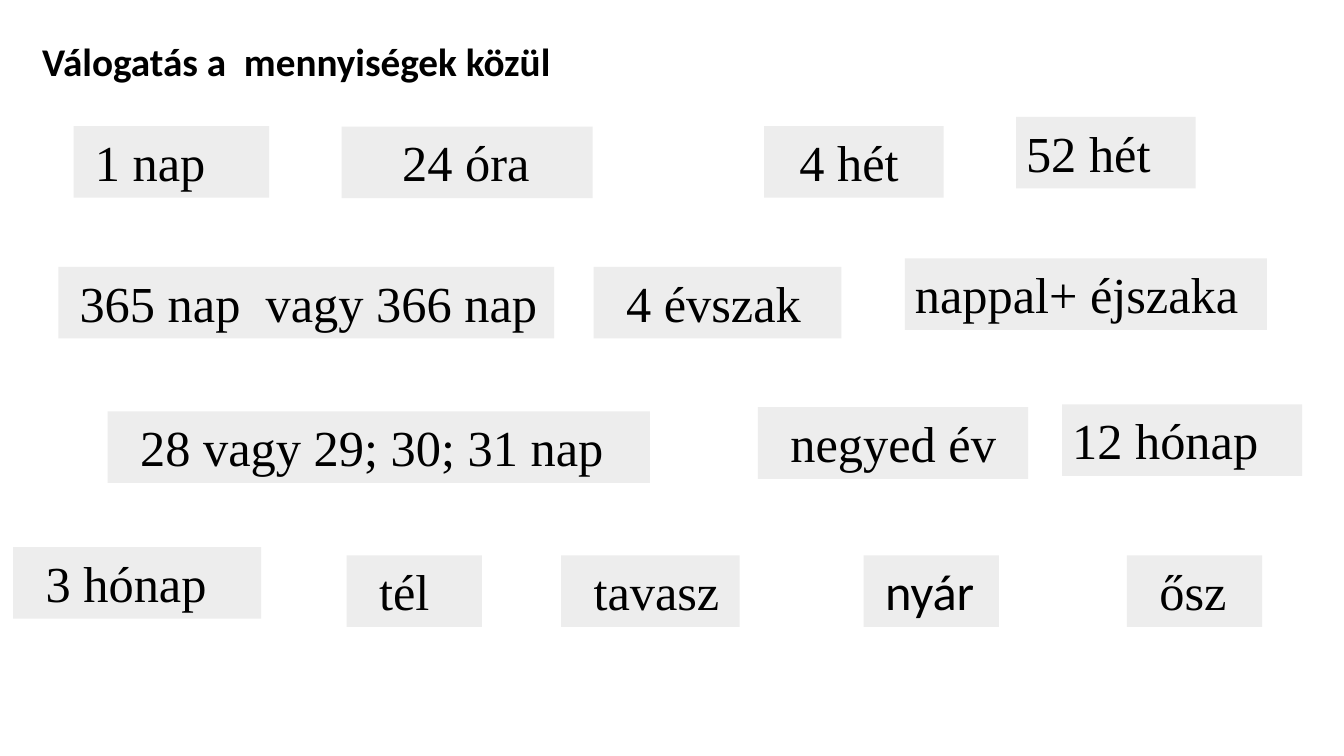
from dataclasses import dataclass

from pptx import Presentation
from pptx.dml.color import RGBColor
from pptx.enum import shapes, text
from pptx.util import Pt


@dataclass(frozen=True)
class Theme:
    ink: RGBColor = RGBColor(0, 0, 0)
    card_fill: RGBColor = RGBColor(0xED, 0xED, 0xED)
    sans: str = "Calibri"
    serif: str = "Times New Roman"
    heading_size: int = 28
    card_size: int = 36
    inset: float = 7.2
    card_height: float = 51.1


THEME = Theme()

HEADING = "Válogatás a  mennyiségek közül"
HEADING_BOX = (23, 23, 450, 41)

QUANTITY_ROWS = [
    (90, [
        ("1 nap", 52.6, 0, 139.7, 8),
        ("24 óra", 244, 0.4, 179.3, 36),
        ("4 hét", 545.8, 0, 128.2, 18),
        ("52 hét", 725.8, -6.6, 128.2, 0),
    ]),
    (190.6, [
        ("365 nap  vagy 366 nap", 41.6, 0, 354.2, 8),
        ("4 évszak", 424, 0, 177.1, 16),
        ("nappal+ éjszaka", 646.4, -6, 258.5, 0),
    ]),
    (290.9, [
        ("28 vagy 29; 30; 31 nap", 76.9, 2.9, 387.4, 16),
        ("negyed év", 541.4, 0, 193, 16),
        ("12 hónap", 758.7, -2, 171.4, 0),
    ]),
    (396.7, [
        ("3 hónap", 9.4, -5.9, 177.1, 16),
        ("tél", 247.7, 0, 96.5, 16),
        ("tavasz", 400.8, 0, 127.6, 16),
        ("nyár", 617, 0, 96.5, 8),
        ("ősz", 805, 0, 96.5, 16),
    ]),
]
SANS_QUANTITIES = {"nyár"}


def apply_format(target, values):
    for attribute, value in values.items():
        setattr(target, attribute, value)


def write_line(frame, wording, indent, font_values):
    apply_format(frame, {
        "word_wrap": True,
        "vertical_anchor": text.MSO_ANCHOR.TOP,
        "margin_left": Pt(THEME.inset + indent),
        "margin_right": Pt(0),
        "margin_top": Pt(THEME.inset / 2),
        "margin_bottom": Pt(THEME.inset / 2),
    })
    line = frame.paragraphs[0]
    line.alignment = text.PP_ALIGN.LEFT
    run = line.add_run()
    run.text = wording
    apply_format(run.font, font_values)
    run.font.color.rgb = THEME.ink


def add_heading(slide, box):
    heading = slide.shapes.add_textbox(*map(Pt, box))
    write_line(heading.text_frame, HEADING, 0, {
        "name": THEME.sans, "size": Pt(THEME.heading_size), "bold": True})


def add_quantity(slide, box, wording, indent):
    card = slide.shapes.add_shape(shapes.MSO_SHAPE.RECTANGLE, *map(Pt, box))
    card.shadow.inherit = False
    card.fill.solid()
    card.fill.fore_color.rgb = THEME.card_fill
    card.line.fill.background()
    write_line(card.text_frame, wording, indent, {
        "name": THEME.sans if wording in SANS_QUANTITIES else THEME.serif,
        "size": Pt(THEME.card_size)})


def add_quantity_row(slide, top, quantities):
    for wording, left, shift, width, indent in quantities:
        box = (left, top + shift, width, THEME.card_height)
        add_quantity(slide, box, wording, indent)


def main():
    deck = Presentation()
    apply_format(deck, {"slide_width": Pt(960), "slide_height": Pt(540)})
    slide = deck.slides.add_slide(deck.slide_layouts[6])
    add_heading(slide, HEADING_BOX)
    for top, quantities in QUANTITY_ROWS:
        add_quantity_row(slide, top, quantities)
    deck.save("out.pptx")


if __name__ == "__main__":
    main()
